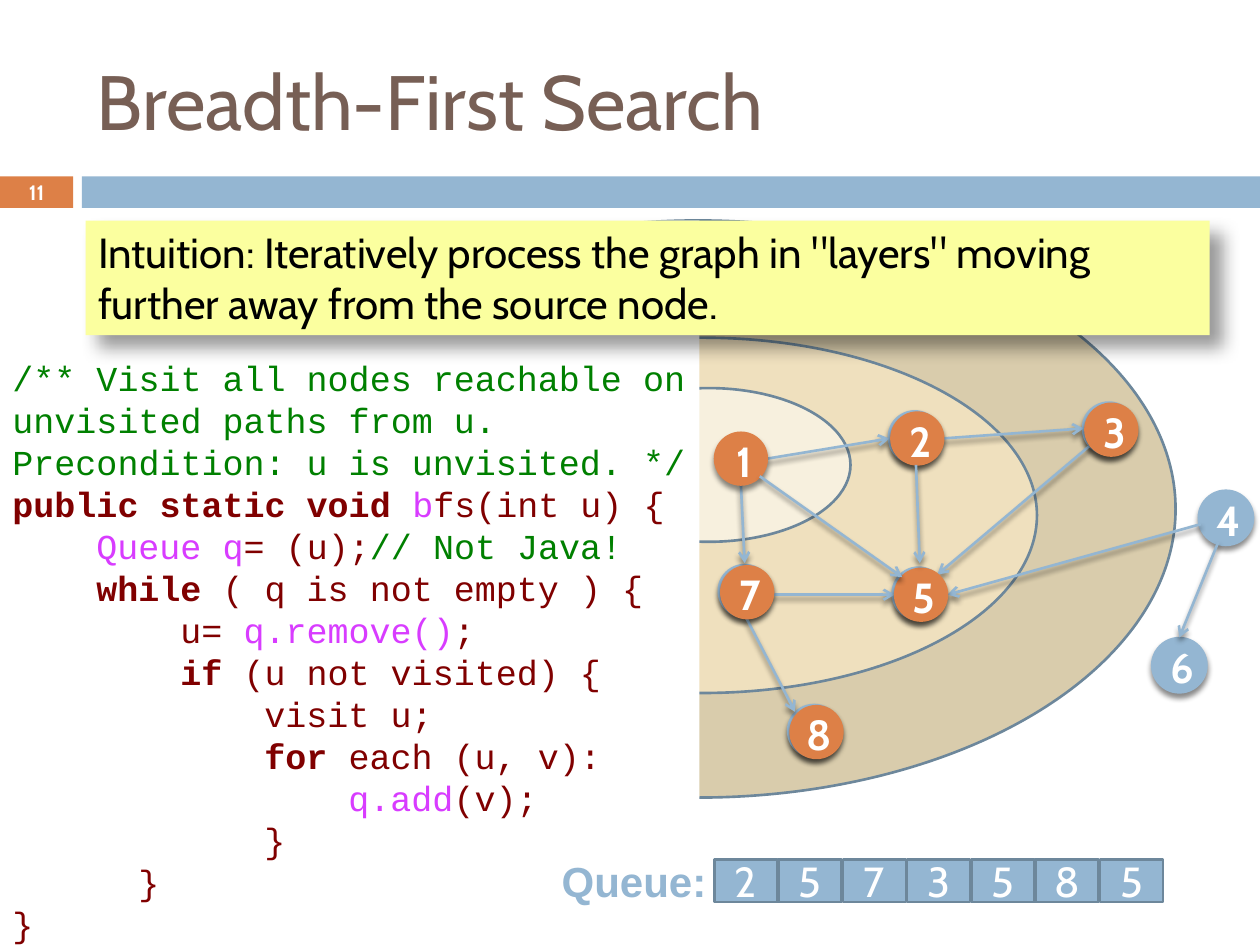
from lxml import etree
from pptx import Presentation
from pptx.dml.color import RGBColor
from pptx.enum.shapes import MSO_CONNECTOR, MSO_SHAPE
from pptx.enum.text import MSO_ANCHOR, PP_ALIGN
from pptx.oxml.ns import qn
from pptx.util import Inches, Pt

RECT, OVAL = MSO_SHAPE.RECTANGLE, MSO_SHAPE.OVAL
STRAIGHT = MSO_CONNECTOR.STRAIGHT
TOP, MIDDLE = MSO_ANCHOR.TOP, MSO_ANCHOR.MIDDLE
LEFT, CENTER = PP_ALIGN.LEFT, PP_ALIGN.CENTER

COLORS = {
    "white": "FFFFFF", "black": "000000", "title": "775F55",
    "orange": "DD8047", "blue": "94B6D2", "outline": "6D879B",
    "outer": "D9CCAC", "middle": "EFE0BE", "inner": "F7F0DE",
    "note": "FBFF9F", "comment": "008000", "code": "800000", "call": "D83CFF",
}
NODE_SHADOW = (45, 3, 2.4, 90)
NOTE_SHADOW = (40, 10, 10, 45)
PADDING = (0.1, 0.05, 0.1, 0.05)
LAYERS = [
    ((1.75, 1.75, 7.58, 4.58), "outer"),
    ((2.92, 2.68, 5.31, 2.82), "middle"),
    ((4.5, 3.08, 2.25, 1.22), "inner"),
]
VISITED = [
    ("1", 5.67, 3.43), ("2", 7.07, 3.27), ("3", 8.61, 3.2),
    ("5", 7.1, 4.51), ("7", 5.72, 4.49), ("8", 6.27, 5.6),
]
UNVISITED = [("4", 9.51, 3.89), ("6", 9.14, 5.06)]
EDGES = [
    (5.88, 3.84, 5.91, 4.47), (6.09, 3.64, 7.06, 3.48),
    (7.48, 3.48, 8.6, 3.4), (8.67, 3.52, 7.44, 4.56),
    (9.53, 4.16, 7.52, 4.72), (9.67, 4.3, 9.36, 5.06),
    (6.13, 4.72, 7.1, 4.72), (5.91, 4.88, 6.31, 5.65),
]
FRONT_EDGES = [(6.03, 3.78, 7.16, 4.58), (7.27, 3.69, 7.3, 4.47)]
QUEUE = "2573585"
CODE = [
    (0, [("/** Visit all nodes reachable on unvisited paths from u.", "comment", False)]),
    (0, [("Precondition: u is unvisited. */", "comment", False)]),
    (0, [("public static void ", "code", True), ("b", "call", False),
         ("fs(int u) {", "code", False)]),
    (4, [("Queue q", "call", False), ("= (u);", "code", False),
         ("// Not Java!", "comment", False)]),
    (4, [("while ", "code", True), ("( q is not empty ) {", "code", False)]),
    (8, [("u= ", "code", False), ("q.remove()", "call", False), (";", "code", False)]),
    (8, [("if ", "code", True), ("(u not visited) {", "code", False)]),
    (12, [("visit u;", "code", False)]),
    (12, [("for ", "code", True), ("each (u, v):", "code", False)]),
    (16, [("q.add", "call", False), ("(v);", "code", False)]),
    (12, [("}", "code", False)]),
    (6, [("}", "code", False)]),
    (0, [("}", "code", False)]),
]


def rgb(name):
    """Look up a named colour."""
    return RGBColor.from_string(COLORS[name])


def add_shadow(effects, shadow):
    """Fill an effect list with an outer shadow."""
    alpha, blur, dist, angle = shadow
    outer = etree.SubElement(effects, qn("a:outerShdw"), blurRad=str(Pt(blur)),
                             dist=str(Pt(dist)), dir=str(angle * 60000),
                             algn="tl", rotWithShape="0")
    color = etree.SubElement(outer, qn("a:srgbClr"), val=COLORS["black"])
    etree.SubElement(color, qn("a:alpha"), val=str(alpha * 1000))


def add_box(s, kind, box, fill, line=None, width=1.5, shadow=None):
    """Add a filled preset shape."""
    sp = s.shapes.add_shape(kind, *map(Inches, box))
    sp.fill.solid()
    sp.fill.fore_color.rgb = rgb(fill)
    if line:
        sp.line.color.rgb = rgb(line)
        sp.line.width = Pt(width)
    else:
        sp.line.fill.background()
    sp.shadow.inherit = False
    if shadow:
        add_shadow(sp._element.spPr.find(qn("a:effectLst")), shadow)
    return sp


def set_frame(sp, anchor, insets=PADDING, wrap=True):
    """Set the anchor, insets and wrapping of a shape's text."""
    tf = sp.text_frame
    tf.word_wrap = wrap
    tf.vertical_anchor = anchor
    tf.margin_left, tf.margin_top, tf.margin_right, tf.margin_bottom = map(Inches, insets)
    return tf


def style_run(r, size, color, bold=False, font="Cabin"):
    """Format one run."""
    r.font.name = font
    r.font.size = Pt(size)
    r.font.bold = bold
    r.font.color.rgb = rgb(color)


def write(tf, text, size, color, bold=False, font="Cabin", align=LEFT):
    """Write a single paragraph in one style."""
    tf.text = text
    p = tf.paragraphs[0]
    p.alignment = align
    style_run(p.runs[0], size, color, bold, font)


def add_label(s, box, text, size, color, anchor=TOP, wrap=True, **style):
    """Add a text box."""
    sp = s.shapes.add_textbox(*map(Inches, box))
    write(set_frame(sp, anchor, wrap=wrap), text, size, color, **style)


def add_node(s, text, x, y, fill, size=0.42):
    """Add a numbered graph node."""
    sp = add_box(s, OVAL, (x, y, size, size), fill, fill, 0.79, NODE_SHADOW)
    tf = set_frame(sp, MIDDLE, (0.05, 0.03, 0, 0), wrap=False)
    write(tf, text, 24, "white", bold=True, align=CENTER)


def add_edge(s, ends):
    """Add an arrow between two nodes."""
    cxn = s.shapes.add_connector(STRAIGHT, *map(Inches, ends))
    cxn.line.color.rgb = rgb("blue")
    cxn.line.width = Pt(1.5)
    etree.SubElement(cxn.line._get_or_add_ln(), qn("a:tailEnd"), type="arrow")
    add_shadow(etree.SubElement(cxn._element.spPr, qn("a:effectLst")), NODE_SHADOW)


def add_code(s):
    """Add the code panel, indented by whole characters."""
    sp = add_box(s, RECT, (0, 1.75, 5.55, 5.75), "white")
    tf = set_frame(sp, TOP, (0.1, 1.08, 0.05, 0))
    for i, (indent, parts) in enumerate(CODE):
        p = tf.add_paragraph() if i else tf.paragraphs[0]
        p.alignment = LEFT
        p.line_spacing = Pt(24)
        p._p.get_or_add_pPr().set("marL", str(Pt(12 * indent)))
        for text, color, bold in parts:
            r = p.add_run()
            r.text = text
            style_run(r, 20, color, bold, "Courier New")


def add_queue(s):
    """Add the queue label and its row of cells."""
    add_label(s, (4.36, 6.74, 1.36, 0.5), "Queue:", 24, "blue",
              wrap=False, bold=True, font="Arial")
    for i, value in enumerate(QUEUE):
        sp = add_box(s, RECT, (5.67 + 0.51 * i, 6.82, 0.5, 0.34), "blue", "outline")
        write(set_frame(sp, MIDDLE), value, 24, "white", align=CENTER)


def main():
    """Build the slide."""
    prs = Presentation()
    prs.slide_width, prs.slide_height = Inches(10), Inches(7.5)
    s = prs.slides.add_slide(prs.slide_layouts[6])
    add_box(s, RECT, (0, 1.4, 0.58, 0.25), "orange")
    add_box(s, RECT, (0.65, 1.4, 9.35, 0.25), "blue")
    for box, fill in LAYERS:
        add_box(s, OVAL, box, fill, "outline")
    add_label(s, (0.67, 0.25, 8.92, 1.08), "Breadth-First Search", 44, "title", anchor=MIDDLE)
    add_code(s)
    add_label(s, (0, 1.39, 0.58, 0.27), "11", 11.9, "white",
              anchor=MIDDLE, bold=True, align=CENTER)
    note = add_box(s, RECT, (0.68, 1.75, 8.92, 0.91), "note", shadow=NOTE_SHADOW)
    write(set_frame(note, TOP), 'Intuition: Iteratively process the graph in "layers" '
          "moving further away from the source node.", 24, "black")
    for _, x, y in VISITED[1:]:
        add_box(s, OVAL, (x - 0.02, y - 0.01, 0.42, 0.42), "blue", "blue", 0.79, NODE_SHADOW)
    for text, x, y in UNVISITED:
        add_node(s, text, x, y, "blue", 0.44)
    for ends in EDGES:
        add_edge(s, ends)
    add_queue(s)
    for text, x, y in VISITED:
        add_node(s, text, x, y, "orange")
    for ends in FRONT_EDGES:
        add_edge(s, ends)
    prs.save("out.pptx")


if __name__ == "__main__":
    main()
